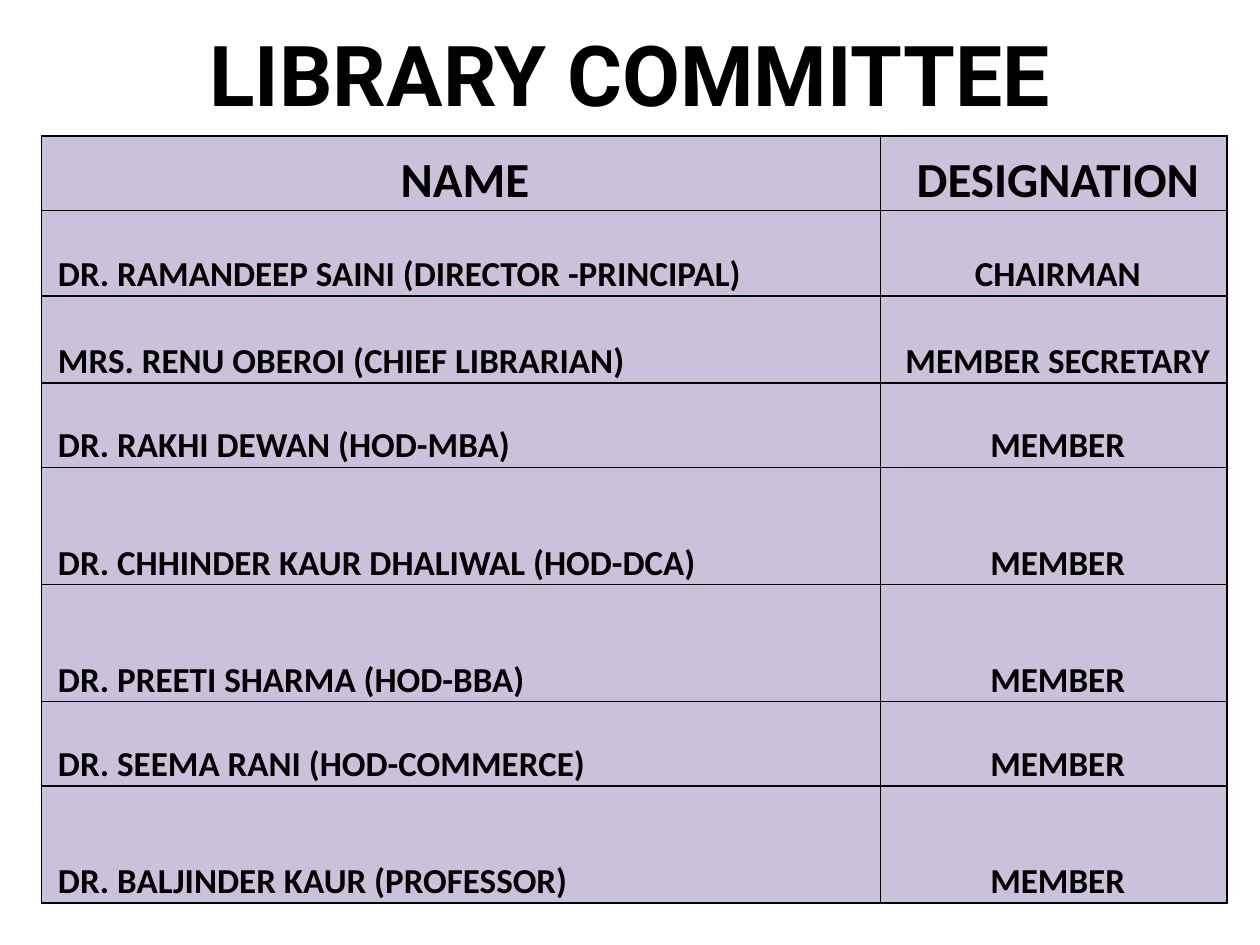
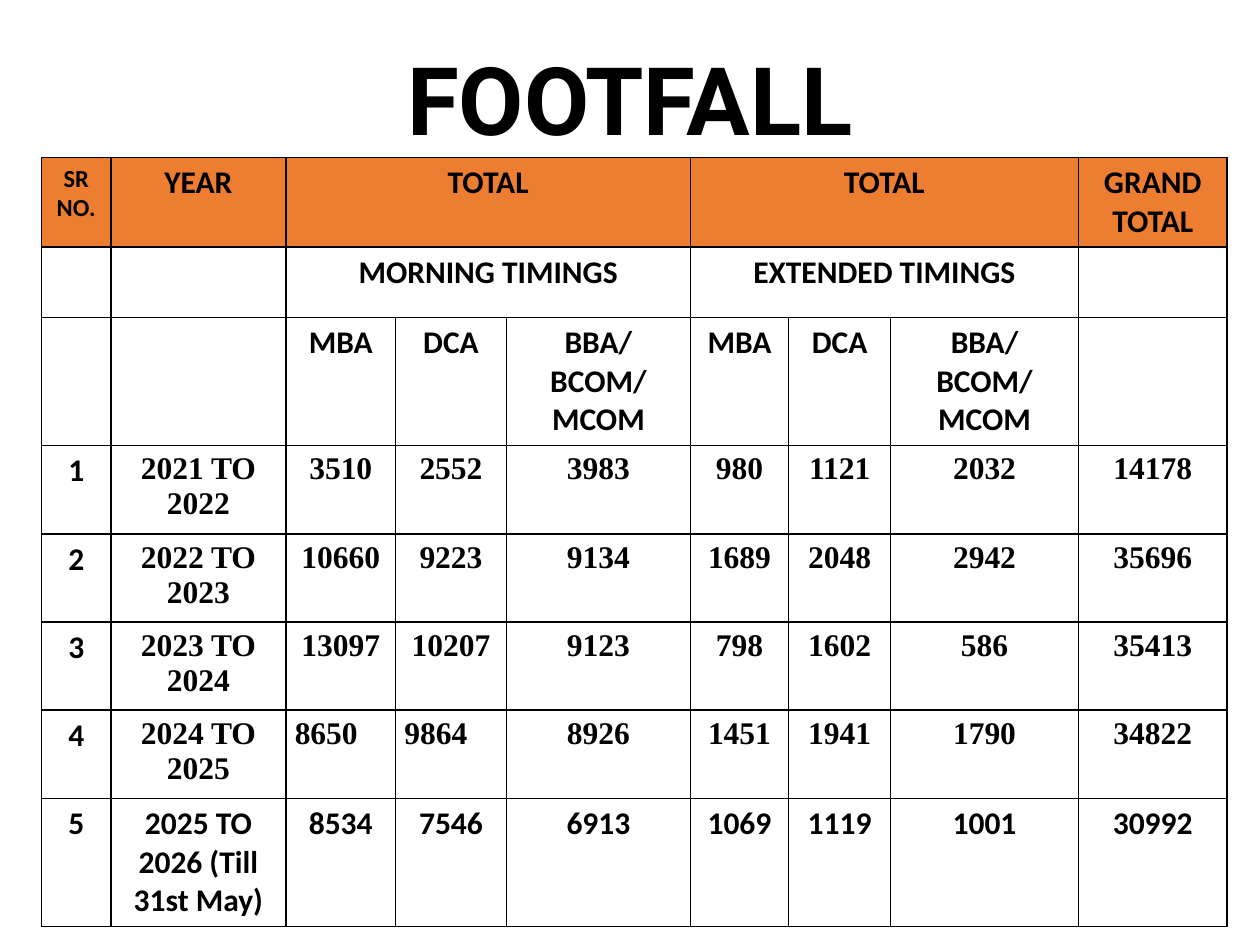
from dataclasses import dataclass

from lxml.etree import SubElement
from pptx import Presentation
from pptx.dml.color import RGBColor
from pptx.enum.text import MSO_ANCHOR as Anchor, MSO_AUTO_SIZE as AutoSize, PP_ALIGN as Align
from pptx.oxml.ns import qn
from pptx.util import Inches, Pt


@dataclass(frozen=True)
class Theme:
    """Colours, fonts and type sizes shared by the slides."""
    ink: RGBColor = RGBColor(0, 0, 0)
    white: RGBColor = RGBColor(255, 255, 255)
    lilac: RGBColor = RGBColor(0xCC, 0xC1, 0xDA)
    orange: RGBColor = RGBColor(0xED, 0x7D, 0x31)
    title_font: str = "Roboto"
    body_font: str = "Calibri"
    figure_font: str = "Times New Roman"
    committee_title_size: int = 48
    footfall_title_size: int = 54
    committee_header_size: int = 28
    committee_body_size: int = 20
    footfall_size: int = 18
    serial_size: int = 14
    border_width: int = 1


THEME = Theme()
TABLE_LEFT = 0.33

COMMITTEE_COLUMNS = [6.66, 2.75]
COMMITTEE_ROWS = [0.59, 0.68, 0.69, 0.67, 0.93, 0.93, 0.67, 0.93]
COMMITTEE = [
    ("NAME", "DESIGNATION"),
    ("DR. RAMANDEEP SAINI (DIRECTOR -PRINCIPAL)", "CHAIRMAN"),
    ("MRS. RENU OBEROI (CHIEF LIBRARIAN)", "MEMBER SECRETARY"),
    ("DR. RAKHI DEWAN (HOD-MBA)", "MEMBER"),
    ("DR. CHHINDER KAUR DHALIWAL (HOD-DCA)", "MEMBER"),
    ("DR. PREETI SHARMA (HOD-BBA)", "MEMBER"),
    ("DR. SEEMA RANI (HOD-COMMERCE)", "MEMBER"),
    ("DR. BALJINDER KAUR (PROFESSOR)", "MEMBER"),
]

FOOTFALL_COLUMNS = [0.55, 1.39, 0.87, 0.88, 1.46, 0.78, 0.81, 1.49, 1.18]
FOOTFALL_ROWS = [0.7, 0.56, 0.96, 0.7, 0.7, 0.7, 0.7, 0.99]
COURSES = ("MBA", "DCA", "BBA/BCOM/MCOM")
FOOTFALL = [
    ("SR NO.", "YEAR", "TOTAL", "", "", "TOTAL", "", "", "GRAND TOTAL"),
    ("", "", "MORNING TIMINGS", "", "", "EXTENDED TIMINGS", "", "", ""),
    ("", "", *COURSES, *COURSES, ""),
    (1, "2021 TO 2022", 3510, 2552, 3983, 980, 1121, 2032, 14178),
    (2, "2022 TO 2023", 10660, 9223, 9134, 1689, 2048, 2942, 35696),
    (3, "2023 TO 2024", 13097, 10207, 9123, 798, 1602, 586, 35413),
    (4, "2024 TO 2025", 8650, 9864, 8926, 1451, 1941, 1790, 34822),
    (5, "2025 TO 2026 (Till 31st May)", 8534, 7546, 6913, 1069, 1119, 1001, 30992),
]
SPAN_STARTS = (2, 5)
SERIF_ROWS = range(3, 7)
JUSTIFIED_CELLS = ((6, 2), (6, 3))


def format_paragraph(paragraph, font_name, size, alignment):
    """Apply alignment and the bold black type that every text shares."""
    paragraph.alignment = alignment
    for run in paragraph.runs:
        run.font.name = font_name
        run.font.size = Pt(size)
        run.font.bold = True
        run.font.color.rgb = THEME.ink


def add_titled_slide(presentation, title, top, height, size):
    """Add a title-only slide with a centred title."""
    slide = presentation.slides.add_slide(presentation.slide_layouts[5])
    shape = slide.shapes.title
    shape.left, shape.top = Inches(0.5), Inches(top)
    shape.width, shape.height = Inches(9), Inches(height)
    text_frame = shape.text_frame
    text_frame.text = title
    text_frame.auto_size = AutoSize.NONE
    text_frame.vertical_anchor = Anchor.MIDDLE
    format_paragraph(text_frame.paragraphs[0], THEME.title_font, size, Align.CENTER)
    return slide


def add_borders(cell):
    """Draw a thin black line on all four sides of a cell."""
    properties = cell._tc.get_or_add_tcPr()
    for side in ("lnL", "lnR", "lnT", "lnB"):
        line = SubElement(properties, qn(f"a:{side}"), w=str(Pt(THEME.border_width)))
        fill = SubElement(line, qn("a:solidFill"))
        SubElement(fill, qn("a:srgbClr"), val=str(THEME.ink))


def add_grid(slide, top, columns, rows):
    """Add an unbanded, bordered table with the given column and row sizes."""
    frame = slide.shapes.add_table(
        len(rows), len(columns), Inches(TABLE_LEFT), Inches(top),
        Inches(sum(columns)), Inches(sum(rows)))
    table = frame.table
    table.first_row = table.horz_banding = False
    for column, width in zip(table.columns, columns):
        column.width = Inches(width)
    for row, height in zip(table.rows, rows):
        row.height = Inches(height)
    for cell in table.iter_cells():
        add_borders(cell)
    return table


def fill_cell(cell, text, colour, size, font_name=THEME.body_font, alignment=Align.CENTER):
    """Set the text and background of a cell and return its paragraph."""
    cell.fill.solid()
    cell.fill.fore_color.rgb = colour
    cell.margin_left = cell.margin_right = Inches(0.07)
    cell.margin_top = cell.margin_bottom = Inches(0.05)
    paragraph = cell.text_frame.paragraphs[0]
    if text != "":
        paragraph.text = str(text)
    format_paragraph(paragraph, font_name, size, alignment)
    return paragraph


def add_committee_slide(presentation):
    """List the committee members and their designations."""
    slide = add_titled_slide(
        presentation, "LIBRARY COMMITTEE", 0.08, 1, THEME.committee_title_size)
    table = add_grid(slide, 1.08, COMMITTEE_COLUMNS, COMMITTEE_ROWS)
    for row, member in enumerate(COMMITTEE):
        size = THEME.committee_body_size if row else THEME.committee_header_size
        for column, text in enumerate(member):
            cell = table.cell(row, column)
            alignment = Align.LEFT if row and column == 0 else Align.CENTER
            paragraph = fill_cell(cell, text, THEME.lilac, size, alignment=alignment)
            paragraph.line_spacing = 1.07
            paragraph.space_after = Pt(8)
            cell.margin_left = Inches(0.13)
            cell.margin_top = cell.margin_bottom = 0
            cell.vertical_anchor = Anchor.BOTTOM


def add_footfall_slide(presentation):
    """Show yearly visits by course for morning and extended timings."""
    slide = add_titled_slide(presentation, "FOOTFALL", 0.3, 0.95, THEME.footfall_title_size)
    table = add_grid(slide, 1.25, FOOTFALL_COLUMNS, FOOTFALL_ROWS)
    for row in range(2):
        for start in SPAN_STARTS:
            table.cell(row, start).merge(table.cell(row, start + 2))
    for row, values in enumerate(FOOTFALL):
        colour = THEME.white if row else THEME.orange
        for column, value in enumerate(values):
            serif = row in SERIF_ROWS and column > 0
            fill_cell(
                table.cell(row, column), value, colour,
                THEME.serial_size if row == column == 0 else THEME.footfall_size,
                THEME.figure_font if serif else THEME.body_font,
                Align.JUSTIFY if (row, column) in JUSTIFIED_CELLS else Align.CENTER)


def main():
    """Build and save the presentation."""
    presentation = Presentation()
    presentation.slide_width, presentation.slide_height = Inches(10), Inches(7.5)
    add_committee_slide(presentation)
    add_footfall_slide(presentation)
    presentation.save("out.pptx")


if __name__ == "__main__":
    main()
